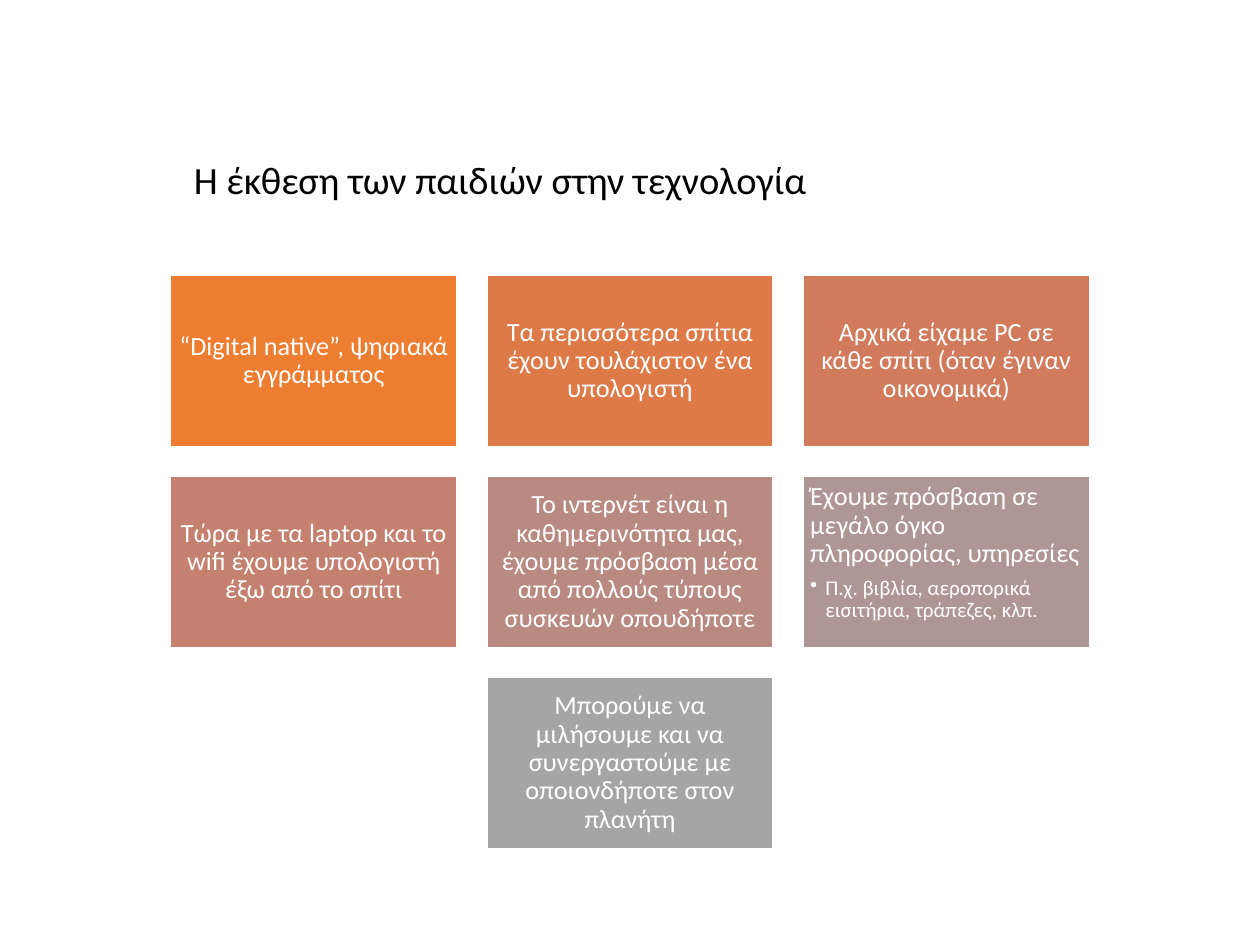
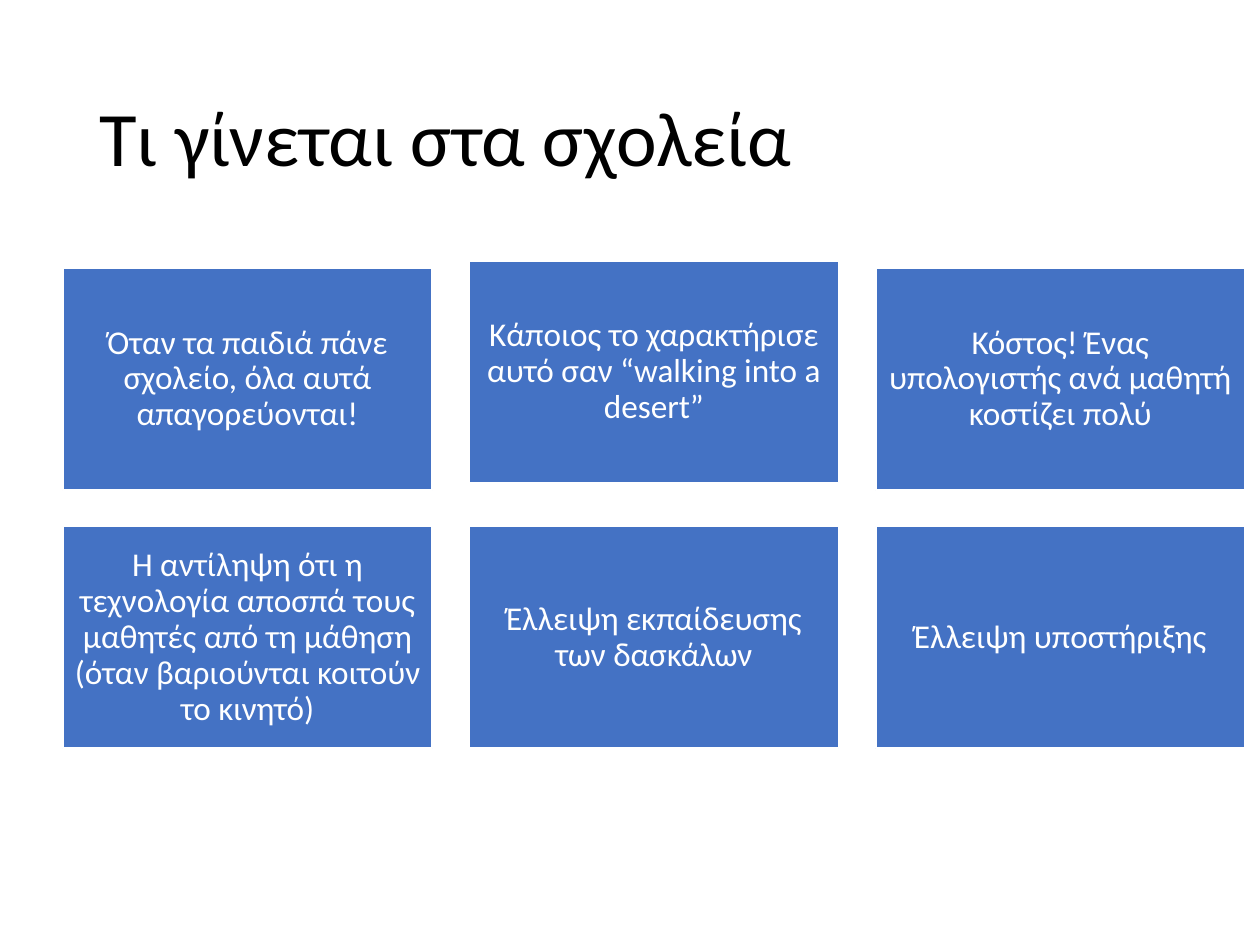
from dataclasses import dataclass
from typing import NamedTuple

from lxml import etree
from pptx import Presentation
from pptx.dml.color import RGBColor
from pptx.enum.shapes import MSO_SHAPE
from pptx.enum.text import MSO_ANCHOR, PP_ALIGN
from pptx.oxml.ns import qn
from pptx.util import Inches, Pt


class Box(NamedTuple):
    left: float
    top: float
    width: float
    height: float

    def lengths(self):
        return [Inches(side) for side in self]


@dataclass(frozen=True)
class Theme:
    font: str = "Calibri"
    ink: str = "000000"
    paper: str = "FFFFFF"
    school_fill: str = "4472C4"
    exposure_fills: tuple = ("ED7D31", "DE7A47", "D17B5C", "C48170", "B98A82", "AE9694", "A5A5A5")
    exposure_title: int = 22
    school_title: int = 44
    exposure_text: int = 15
    example_text: int = 12
    school_text: int = 19
    line_spacing: float = 0.9
    example_gap: int = 5


@dataclass(frozen=True)
class CardStyle:
    width: float
    height: float
    inset: float
    text_size: int
    outline: float


@dataclass(frozen=True)
class Card:
    text: str
    fill: str
    example: str = ""
    lift: float = 0


THEME = Theme()
COLUMNS = 3

EXPOSURE_STYLE = CardStyle(2.28, 1.37, 0.06, THEME.exposure_text, 1.5)
SCHOOL_STYLE = CardStyle(2.93, 1.76, 0.08, THEME.school_text, 1)

EXPOSURE_TEXTS = [
    "“Digital native”, ψηφιακά εγγράμματος",
    "Τα περισσότερα σπίτια έχουν τουλάχιστον ένα υπολογιστή",
    "Αρχικά είχαμε PC σε κάθε σπίτι (όταν έγιναν οικονομικά)",
    "Τώρα με τα laptop και το wifi έχουμε υπολογιστή έξω από το σπίτι",
    "Το ιντερνέτ είναι η καθημερινότητα μας, έχουμε πρόσβαση μέσα από πολλούς τύπους συσκευών οπουδήποτε",
    "Έχουμε πρόσβαση σε μεγάλο όγκο πληροφορίας, υπηρεσίες",
    "Μπορούμε να μιλήσουμε και να συνεργαστούμε με οποιονδήποτε στον πλανήτη",
]
EXAMPLES = {5: "Π.χ. βιβλία, αεροπορικά εισιτήρια, τράπεζες, κλπ."}

SCHOOL_TEXTS = [
    "Όταν τα παιδιά πάνε σχολείο, όλα αυτά απαγορεύονται!",
    "Κάποιος το χαρακτήρισε αυτό σαν “walking into a desert”",
    "Κόστος! Ένας υπολογιστής ανά μαθητή κοστίζει πολύ",
    "Η αντίληψη ότι η τεχνολογία αποσπά τους μαθητές από τη μάθηση (όταν βαριούνται κοιτούν το κινητό)",
    "Έλλειψη εκπαίδευσης των δασκάλων",
    "Έλλειψη υποστήριξης",
]
SCHOOL_LIFTS = {1: 0.06}


def write(paragraph, text, size, color, align=PP_ALIGN.LEFT):
    paragraph.text = text
    paragraph.alignment = align
    paragraph.line_spacing = THEME.line_spacing
    for run in paragraph.runs:
        run.font.name = THEME.font
        run.font.size = Pt(size)
        run.font.color.rgb = RGBColor.from_string(color)


def add_bullet(paragraph, indent):
    properties = paragraph._p.get_or_add_pPr()
    properties.set("marL", str(Inches(indent)))
    properties.set("indent", str(-Inches(indent)))
    etree.SubElement(properties, qn("a:buChar"), char="•")


def add_title(slide, box, text, size):
    frame = slide.shapes.add_textbox(*box.lengths()).text_frame
    frame.word_wrap = True
    frame.vertical_anchor = MSO_ANCHOR.MIDDLE
    write(frame.paragraphs[0], text, size, THEME.ink)


def add_card(slide, box, card, style):
    tile = slide.shapes.add_shape(MSO_SHAPE.RECTANGLE, *box.lengths())
    tile.shadow.inherit = False
    tile.fill.solid()
    tile.fill.fore_color.rgb = RGBColor.from_string(card.fill)
    tile.line.color.rgb = RGBColor.from_string(THEME.paper)
    tile.line.width = Pt(style.outline)

    frame = tile.text_frame
    frame.word_wrap = True
    frame.margin_left = frame.margin_right = Inches(style.inset)
    frame.margin_top = frame.margin_bottom = Inches(style.inset)
    frame.vertical_anchor = MSO_ANCHOR.TOP if card.example else MSO_ANCHOR.MIDDLE
    statement = frame.paragraphs[0]
    align = PP_ALIGN.LEFT if card.example else PP_ALIGN.CENTER
    write(statement, card.text, style.text_size, THEME.paper, align)
    if card.example:
        statement.space_after = Pt(THEME.example_gap)
        example = frame.add_paragraph()
        write(example, card.example, THEME.example_text, THEME.paper)
        add_bullet(example, 0.12)


def add_card_grid(slide, box, cards, style):
    """Spread the cards evenly over the box; a short last row is centred."""
    rows = [cards[start:start + COLUMNS] for start in range(0, len(cards), COLUMNS)]
    column_step = (box.width - style.width) / (COLUMNS - 1)
    row_step = (box.height - style.height) / (len(rows) - 1)
    for row_index, row in enumerate(rows):
        row_left = box.left + (COLUMNS - len(row)) * column_step / 2
        for column, card in enumerate(row):
            left = row_left + column * column_step
            top = box.top + row_index * row_step - card.lift
            add_card(slide, Box(left, top, style.width, style.height), card, style)


def add_blank_slide(deck):
    return deck.slides.add_slide(deck.slide_layouts[6])


def build_exposure_slide(deck):
    slide = add_blank_slide(deck)
    add_title(slide, Box(1.44, 0.87, 7.11, 1.15),
              "Η έκθεση των παιδιών στην τεχνολογία", THEME.exposure_title)
    cards = [Card(text, fill, example=EXAMPLES.get(index, ""))
             for index, (text, fill) in enumerate(zip(EXPOSURE_TEXTS, THEME.exposure_fills))]
    add_card_grid(slide, Box(1.35, 2.18, 7.3, 4.56), cards, EXPOSURE_STYLE)


def build_school_slide(deck):
    slide = add_blank_slide(deck)
    add_title(slide, Box(0.69, 0.4, 8.62, 1.45), "Τι γίνεται στα σχολεία", THEME.school_title)
    cards = [Card(text, THEME.school_fill, lift=SCHOOL_LIFTS.get(index, 0))
             for index, text in enumerate(SCHOOL_TEXTS)]
    add_card_grid(slide, Box(0.5, 2.13, 9.38, 3.81), cards, SCHOOL_STYLE)


def main():
    deck = Presentation()
    deck.slide_width, deck.slide_height = Inches(10), Inches(7.5)
    build_exposure_slide(deck)
    build_school_slide(deck)
    deck.save("out.pptx")


if __name__ == "__main__":
    main()
